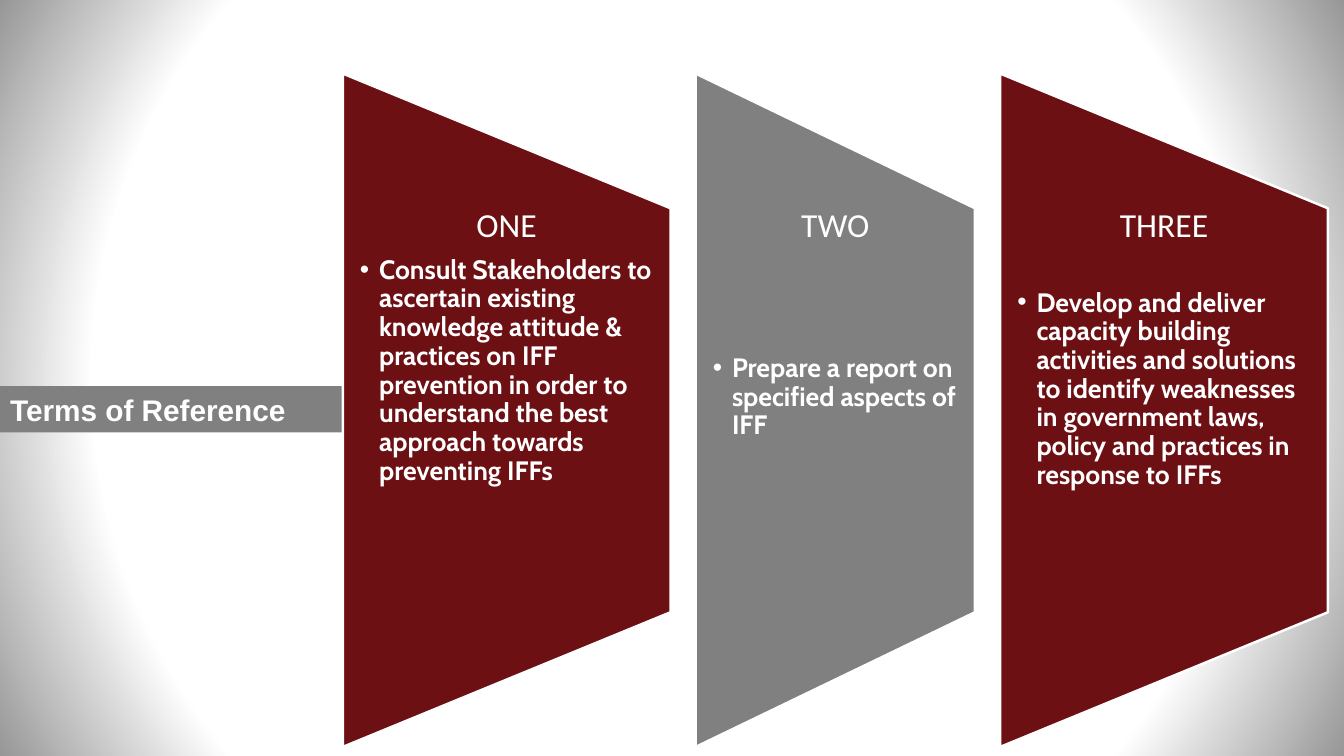
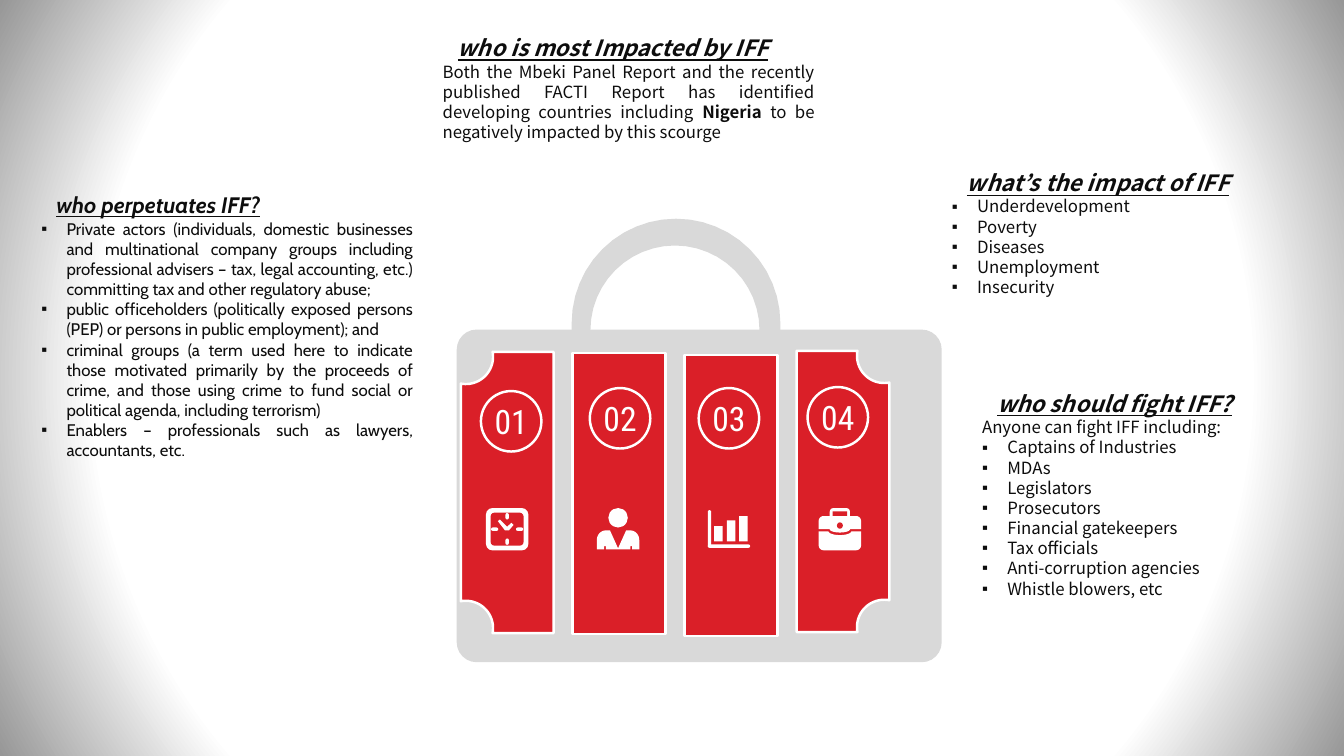
import dataclasses
import math

import lxml.etree
import pptx
import pptx.dml.color
import pptx.enum.shapes
import pptx.enum.text
import pptx.oxml.ns
import pptx.util

SHAPE = pptx.enum.shapes.MSO_SHAPE
ALIGN = pptx.enum.text.PP_ALIGN
ANCHOR = pptx.enum.text.MSO_ANCHOR
RGB = pptx.dml.color.RGBColor.from_string
Inches = pptx.util.Inches
Pt = pptx.util.Pt
qn = pptx.oxml.ns.qn


@dataclasses.dataclass(frozen=True)
class Theme:
    """Colours, fonts and type sizes of the deck."""
    white: str = "FFFFFF"
    vignette: str = "979797"
    maroon: str = "6D1014"
    grey: str = "808080"
    case: str = "D9D9D9"
    red: str = "DA1F28"
    ink: str = "0D0D0D"
    title_font: str = "Arial"
    label_font: str = "Calibri"
    list_font: str = "Cabin"
    note_font: str = "Noto Sans CJK JP"
    badge_font: str = "Roboto Condensed"
    title_size: float = 21.3
    label_size: float = 24
    term_size: float = 19
    heading_size: float = 16
    note_size: float = 12
    leading: float = 1.2


THEME = Theme()


@dataclasses.dataclass(frozen=True)
class Box:
    """A rectangle in inches."""
    left: float
    top: float
    width: float
    height: float

    def inner(self, left, top, width, height):
        """Return the box at the given shares of this one."""
        return Box(self.left + left * self.width, self.top + top * self.height,
                   width * self.width, height * self.height)

    def emu(self):
        """Return the four lengths for python-pptx."""
        return [Inches(n) for n in (self.left, self.top, self.width, self.height)]


def paint(shape, fill, line=None, line_width=1.75):
    """Give a shape a flat fill and an optional outline."""
    shape.shadow.inherit = False
    shape.fill.solid()
    shape.fill.fore_color.rgb = RGB(fill)
    if line:
        shape.line.color.rgb = RGB(line)
        shape.line.width = Pt(line_width)
    else:
        shape.line.fill.background()
    return shape


def preset(slide, kind, box, fill, line=None, corner=None):
    """Add a painted preset shape."""
    shape = slide.shapes.add_shape(kind, *box.emu())
    if corner is not None:
        shape.adjustments[0] = corner
    return paint(shape, fill, line)


def outline(slide, box, points, fill, line=None):
    """Add a closed shape whose points are shares of the box."""
    spots = [(Inches(box.left + x * box.width), Inches(box.top + y * box.height))
             for x, y in points]
    builder = slide.shapes.build_freeform(*spots[0])
    builder.add_line_segments(spots[1:], close=True)
    return paint(builder.convert_to_shape(), fill, line)


def arc(x, y, radius_x, radius_y, start, end, steps=24):
    """Return points along an elliptical arc, in degrees."""
    angles = [math.radians(start + (end - start) * i / steps) for i in range(steps + 1)]
    return [(x + radius_x * math.cos(a), y + radius_y * math.sin(a)) for a in angles]


def style(paragraph, font, size, color, bold=False, italic=False, underline=False):
    """Format every run of a paragraph."""
    for run in paragraph.runs:
        run.font.name = font
        run.font.size = Pt(size)
        run.font.color.rgb = RGB(color)
        run.font.bold = bold
        run.font.italic = italic
        run.font.underline = underline


def layout_paragraph(paragraph, align, spacing, after=0, margin=0, bullet=None):
    """Set alignment, spacing, indent and bullet of a paragraph."""
    paragraph.alignment = align
    paragraph.line_spacing = spacing
    paragraph.space_before = Pt(0)
    paragraph.space_after = Pt(after)
    properties = paragraph._p.get_or_add_pPr()
    properties.set("marL", str(Inches(margin)))
    properties.set("indent", str(Inches(-margin if bullet else 0)))
    if bullet:
        lxml.etree.SubElement(properties, qn("a:buFont")).set("typeface", THEME.title_font)
        lxml.etree.SubElement(properties, qn("a:buChar")).set("char", bullet)
    else:
        lxml.etree.SubElement(properties, qn("a:buNone"))


def place(holder, box, side=0.1, edge=0.05, anchor=ANCHOR.TOP):
    """Move a placeholder to a box and return its text frame."""
    holder.left, holder.top, holder.width, holder.height = box.emu()
    frame = holder.text_frame
    frame.word_wrap = True
    frame.auto_size = pptx.enum.text.MSO_AUTO_SIZE.NONE
    frame.vertical_anchor = anchor
    frame.margin_left = frame.margin_right = Inches(side)
    frame.margin_top = frame.margin_bottom = Inches(edge)
    return frame


def set_background(master):
    """Give all slides the white centre with grey corners."""
    fill = master.background.fill
    fill.gradient()
    for stop, color, position in zip(fill.gradient_stops, (THEME.white, THEME.vignette), (0.75, 1)):
        stop.color.rgb = RGB(color)
        stop.position = position
    gradient = next(master.element.iter(qn("a:gradFill")))
    for linear in gradient.findall(qn("a:lin")):
        gradient.remove(linear)
    circle = lxml.etree.SubElement(gradient, qn("a:path"))
    circle.set("path", "circle")
    centre = lxml.etree.SubElement(circle, qn("a:fillToRect"))
    for side in "ltrb":
        centre.set(side, "50000")


def title_band(holder, box, text):
    """Fill the title placeholder as a grey band."""
    frame = place(holder, box, anchor=ANCHOR.MIDDLE)
    frame.text = text
    holder.fill.solid()
    holder.fill.fore_color.rgb = RGB(THEME.grey)
    layout_paragraph(frame.paragraphs[0], ALIGN.LEFT, 1.0)
    style(frame.paragraphs[0], THEME.title_font, THEME.title_size, THEME.white, bold=True)


def term_panel(slide, holder, box, fill, label, term, skipped_lines):
    """Draw one tapered panel with its label and term."""
    turned = Box(box.left + (box.width - box.height) / 2,
                 box.top + (box.height - box.width) / 2, box.height, box.width)
    panel = preset(slide, SHAPE.FLOWCHART_MANUAL_OPERATION, turned, fill, THEME.white)
    panel.rotation = 270
    slide.shapes.element.append(holder.element)
    frame = place(holder, box.inner(0, 0.2, 1, 0.6), side=0.17, edge=0)
    frame.text = f"{label}\n{term}"
    heading, item = frame.paragraphs
    gap = 0.35 * THEME.label_size + skipped_lines * 23.4
    layout_paragraph(heading, ALIGN.CENTER, 0.9, after=gap)
    style(heading, THEME.label_font, THEME.label_size, THEME.white)
    layout_paragraph(item, ALIGN.LEFT, 0.9, margin=0.19, bullet="•")
    style(item, THEME.list_font, THEME.term_size, THEME.white, bold=True)


def terms_slide(slide):
    """Build the slide of three terms of reference."""
    title, *bodies = slide.placeholders
    title_band(title, Box(0, 3.83, 3.39, 0.46), "Terms of Reference")
    terms = [
        (3.25, THEME.maroon, "ONE", "Consult Stakeholders to ascertain existing knowledge attitude & "
         "practices on IFF prevention in order to understand the best approach towards preventing IFFs", 0),
        (2.77, THEME.grey, "TWO", "Prepare a report on specified aspects of IFF", 3),
        (3.25, THEME.maroon, "THREE", "Develop and deliver capacity building activities and solutions to "
         "identify weaknesses in government laws, policy and practices in response to IFFs", 1),
    ]
    left, gap = 3.4, 0.25
    for holder, (width, *content) in zip(bodies, terms):
        term_panel(slide, holder, Box(left, 0.73, width, 6.68), *content)
        left += width + gap
    for unused in bodies[len(terms):]:
        unused.element.getparent().remove(unused.element)


def section_heading(paragraph, font, align):
    """Format a section heading."""
    layout_paragraph(paragraph, align, Pt(THEME.leading * THEME.heading_size), margin=0.15)
    style(paragraph, font, THEME.heading_size, THEME.ink, bold=True, italic=True, underline=True)


def section(holder, box, font, align, heading, intro, items):
    """Fill a body placeholder with a heading, an intro and a list; asterisks mark bold."""
    frame = place(holder, box)
    frame.text = "\n".join(heading + intro + items)
    for index, paragraph in enumerate(frame.paragraphs):
        if index < len(heading):
            section_heading(paragraph, font, align)
            continue
        listed = index >= len(heading) + len(intro)
        layout_paragraph(paragraph, align, Pt(THEME.leading * THEME.note_size),
                         margin=0.25 if listed else 0, bullet="▪" if listed else None)
        pieces = paragraph.text.split("*")
        paragraph.text = pieces[0]
        for piece in pieces[1:]:
            paragraph.add_run().text = piece
        style(paragraph, font, THEME.note_size, THEME.ink)
        for run in paragraph.runs[1::2]:
            run.font.bold = True


def clock_icon(slide, box):
    """Draw a square clock."""
    preset(slide, SHAPE.ROUNDED_RECTANGLE, box, THEME.white, corner=0.15)
    preset(slide, SHAPE.ROUNDED_RECTANGLE, box.inner(0.11, 0.11, 0.78, 0.78), THEME.red, corner=0.12)
    for tick in ((0.46, 0.12, 0.08, 0.15), (0.46, 0.72, 0.08, 0.15),
                 (0.12, 0.46, 0.17, 0.08), (0.71, 0.46, 0.17, 0.08)):
        preset(slide, SHAPE.ROUNDED_RECTANGLE, box.inner(*tick), THEME.white, corner=0.5)
    outline(slide, box, [(0.28, 0.31), (0.33, 0.27), (0.5, 0.44), (0.6, 0.35),
                         (0.65, 0.4), (0.54, 0.53), (0.45, 0.53)], THEME.white)


def person_icon(slide, box):
    """Draw a person in a jacket."""
    preset(slide, SHAPE.OVAL, box.inner(0.27, 0, 0.46, 0.46), THEME.white)
    right_half = [(0.69, 0), *arc(0.79, 0.5, 0.21, 0.5, -90, 0), (1, 1),
                  (0.83, 1), (0.83, 0.83), (0.79, 0.83), (0.79, 1)]
    left_half = [(1 - x, y) for x, y in reversed(right_half)]
    outline(slide, box.inner(0, 0.53, 1, 0.45), left_half + [(0.5, 0.94)] + right_half, THEME.white)


def bars_icon(slide, box):
    """Draw a bar chart with its axes."""
    for left, top in ((0.15, 0.43), (0.45, 0.29), (0.74, 0.19)):
        preset(slide, SHAPE.RECTANGLE, box.inner(left, top, 0.2, 0.79 - top), THEME.white)
    for axis in ((0, 0.05, 0.08, 0.88), (0, 0.86, 1, 0.08)):
        preset(slide, SHAPE.ROUNDED_RECTANGLE, box.inner(*axis), THEME.white, corner=0.5)


def briefcase_icon(slide, box):
    """Draw a briefcase with a curved lid."""
    preset(slide, SHAPE.ROUNDED_RECTANGLE, box.inner(0.26, 0, 0.48, 0.3), THEME.white, corner=0.3)
    preset(slide, SHAPE.RECTANGLE, box.inner(0.33, 0.08, 0.34, 0.12), THEME.red)
    lid = arc(0.12, 0.3, 0.12, 0.3, 180, 270) + arc(0.88, 0.3, 0.12, 0.3, 270, 360)
    outline(slide, box.inner(0, 0.19, 1, 0.39),
            lid + [(1, 0.8), (0.74, 0.8)] + arc(0.5, 0.8, 0.24, 0.2, 0, 180) + [(0, 0.8)], THEME.white)
    preset(slide, SHAPE.OVAL, box.inner(0.43, 0.34, 0.14, 0.15), THEME.red)
    base = arc(0.88, 0.74, 0.12, 0.26, 0, 90) + arc(0.12, 0.74, 0.12, 0.26, 90, 180)
    outline(slide, box.inner(0, 0.55, 1, 0.45),
            [(1, 0), *base, (0, 0), *arc(0.5, 0, 0.27, 0.2, 180, 0)], THEME.white)


def notched_panel(slide, box, mirrored):
    """Draw a panel with round bites out of its outer corners."""
    radius, inset = 0.27, 0.05
    overlap = math.degrees(math.asin(inset / radius))
    bite = arc(inset / box.width, inset / box.height, radius / box.width, radius / box.height,
               -overlap, 90 + overlap)
    points = [(1, 0), *bite, *[(x, 1 - y) for x, y in reversed(bite)], (1, 1)]
    outline(slide, box, [(1 - x, y) if mirrored else (x, y) for x, y in points], THEME.red, THEME.white)


def suitcase(slide, box):
    """Draw the suitcase with its four numbered panels."""
    handle = Box(box.left + 1.14, box.top - 1.1, 2.07, 1.4)
    arch = arc(0.5, 0.74, 0.5, 0.74, 180, 360)
    hollow = arc(0.495, 0.79, 0.405, 0.6, 360, 180)
    outline(slide, handle, [(0, 1), *arch, (1, 1), (0.9, 1), *hollow, (0.09, 1)], THEME.case)
    preset(slide, SHAPE.ROUNDED_RECTANGLE, box, THEME.case, corner=0.06)
    panels = [(0.22, 0.61, clock_icon), (0.23, 0.58, person_icon),
              (0.25, 0.58, bars_icon), (0.21, 0.57, briefcase_icon)]
    for index, (drop, badge_drop, icon) in enumerate(panels):
        panel = Box(box.left + 0.04 + 1.11 * index, box.top + drop, 0.92, 2.79)
        if index in (0, len(panels) - 1):
            notched_panel(slide, panel, mirrored=index > 0)
        else:
            preset(slide, SHAPE.RECTANGLE, panel, THEME.red, THEME.white)
        badge = preset(slide, SHAPE.OVAL, Box(box.left + 0.24 + 1.08 * index, box.top + badge_drop, 0.6, 0.6),
                       THEME.red, THEME.white)
        frame = badge.text_frame
        frame.text = f"{index + 1:02}"
        frame.word_wrap = False
        frame.margin_left = frame.margin_right = frame.margin_top = frame.margin_bottom = 0
        frame.paragraphs[0].alignment = ALIGN.CENTER
        style(frame.paragraphs[0], THEME.badge_font, THEME.label_size, THEME.white)
        icon(slide, Box(box.left + 0.29 + 1.1 * index, box.top + 1.77, 0.42, 0.42))


def questions_slide(slide):
    """Build the slide of four questions around a suitcase."""
    title, *bodies = slide.placeholders
    frame = place(title, Box(4.29, 0.29, 3.89, 0.37))
    frame.text = "who is most Impacted by IFF"
    section_heading(frame.paragraphs[0], THEME.note_font, ALIGN.LEFT)
    sections = [
        (Box(4.29, 0.56, 3.89, 1.5), THEME.note_font, ALIGN.JUSTIFY, [],
         ["Both the Mbeki Panel Report and the recently published FACTI Report has identified developing "
          "countries including *Nigeria* to be negatively impacted by this scourge"], []),
        (Box(0.31, 1.85, 3.89, 3.87), THEME.list_font, ALIGN.JUSTIFY, ["who perpetuates IFF?"], [],
         ["Private actors (individuals, domestic businesses and multinational company groups including "
          "professional advisers – tax, legal accounting, etc.) committing tax and other regulatory abuse;",
          "public officeholders (politically exposed persons (PEP) or persons in public employment); and",
          "criminal groups (a term used here to indicate those motivated primarily by the proceeds of "
          "crime, and those using crime to fund social or political agenda, including terrorism)",
          "Enablers – professionals such as lawyers, accountants, etc."]),
        (Box(9.34, 1.63, 3.17, 1.85), THEME.note_font, ALIGN.LEFT, ["what’s the impact of IFF"], [],
         ["Underdevelopment", "Poverty", "Diseases", "Unemployment", "Insecurity"]),
        (Box(9.64, 3.82, 3.32, 2.62), THEME.note_font, ALIGN.LEFT, ["who should fight IFF?"],
         ["Anyone can fight IFF including:"],
         ["Captains of Industries", "MDAs", "Legislators", "Prosecutors", "Financial gatekeepers",
          "Tax officials", "Anti-corruption agencies", "Whistle blowers, etc"]),
    ]
    for holder, content in zip(bodies, sections):
        section(holder, *content)
    suitcase(slide, Box(4.53, 3.27, 4.81, 3.3))


def main():
    """Build and save the deck."""
    deck = pptx.Presentation()
    deck.slide_width, deck.slide_height = Inches(13.33), Inches(7.5)
    set_background(deck.slide_master)
    comparison = deck.slide_layouts.get_by_name("Comparison")
    for build in (terms_slide, questions_slide):
        build(deck.slides.add_slide(comparison))
    deck.save("out.pptx")


if __name__ == "__main__":
    main()
